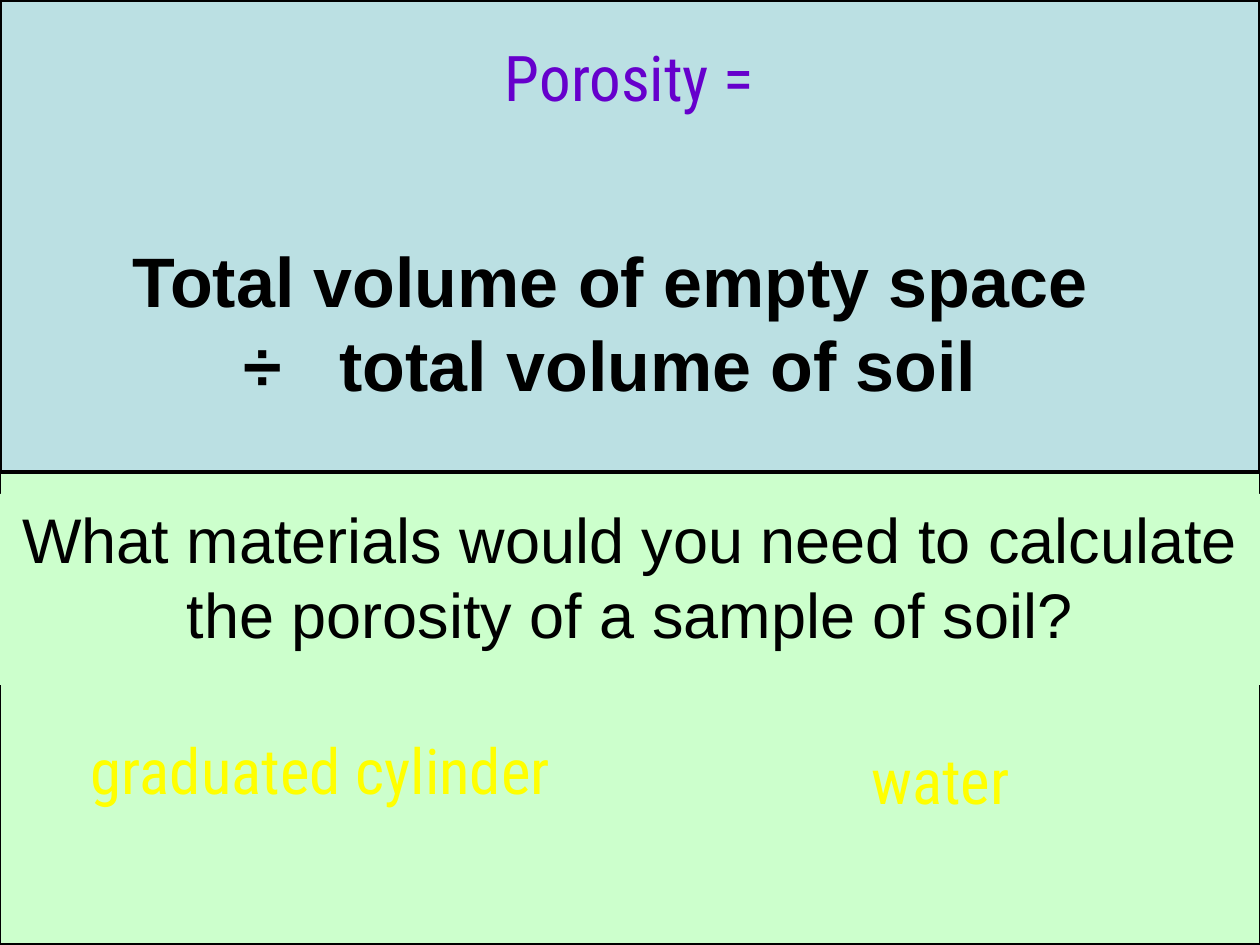
from pptx import Presentation, util as u
from pptx.dml.color import RGBColor
from pptx.enum import shapes, text

EMU_PER_PX = 914400 // 126
WIDTH, HEIGHT = 1260, 945
HALF = HEIGHT // 2
TITLE_ONLY = 5
COLORS = {
    "sky": "BBE0E3",
    "mint": "CCFFCC",
    "black": "000000",
    "purple": "6600CC",
    "yellow": "FFFF00",
}
BODY_FONT = "Arial"
ACCENT_FONT = "Roboto Condensed"


def px(length):
    return u.Emu(length * EMU_PER_PX)


def color(name):
    return RGBColor.from_string(COLORS[name])


class SlideBuilder:
    def __init__(self, slide):
        self.slide = slide

    def panel(self, box, fill, line_width=None):
        shape = self.slide.shapes.add_shape(shapes.MSO_SHAPE.RECTANGLE, *map(px, box))
        shape.shadow.inherit = False
        shape.fill.solid()
        shape.fill.fore_color.rgb = color(fill)
        if line_width is None:
            shape.line.fill.background()
        else:
            shape.line.color.rgb = color("black")
            shape.line.width = u.Pt(line_width)
        return shape

    def set_text(self, shape, lines, size=36, font=BODY_FONT, ink="black",
                 bold=False, anchor=text.MSO_ANCHOR.TOP):
        frame = shape.text_frame
        frame.word_wrap = True
        frame.auto_size = text.MSO_AUTO_SIZE.NONE
        frame.vertical_anchor = anchor
        frame.text = "\n".join(lines)
        for paragraph in frame.paragraphs:
            paragraph.alignment = text.PP_ALIGN.CENTER
            paragraph.font.name = font
            paragraph.font.size = u.Pt(size)
            paragraph.font.bold = bold
            paragraph.font.color.rgb = color(ink)
        return frame

    def title(self, box, words, **style):
        """Place the title in front of the panels drawn so far."""
        shape = self.slide.shapes.title
        shape.left, shape.top, shape.width, shape.height = map(px, box)
        self.set_text(shape, [words], **style)
        shape.element.getparent().append(shape.element)

    def label(self, box, *lines, **style):
        shape = self.slide.shapes.add_textbox(*map(px, box))
        return self.set_text(shape, lines, **style)


def add_formula(builder):
    frame = builder.label((92, 231, 1076, 180), "Total volume of empty space", "÷",
                          size=40, bold=True, anchor=text.MSO_ANCHOR.MIDDLE)
    numerator, denominator = frame.paragraphs
    numerator._p.get_or_add_pPr().set("marR", str(px(40)))
    gap = denominator.add_run()
    gap.text = " "
    gap._r.get_or_add_rPr().set("spc", "2200")
    denominator.add_run().text = "total volume of soil"


def main():
    presentation = Presentation()
    presentation.slide_width, presentation.slide_height = px(WIDTH), px(HEIGHT)
    layout = presentation.slide_layouts[TITLE_ONLY]
    builder = SlideBuilder(presentation.slides.add_slide(layout))

    builder.panel((0, HALF, WIDTH, HALF), "mint", 0.75)
    builder.panel((0, 0, WIDTH, HALF), "sky", 2)
    add_formula(builder)
    builder.title((358, 32, 543, 178), "Porosity =", font=ACCENT_FONT, ink="purple")

    question = builder.panel((0, 494, WIDTH, 191), "mint")
    builder.set_text(question, ["What materials would you need to calculate "
                                "the porosity of a sample of soil?"])

    for box, material in (((73, 725, 495, 78), "graduated cylinder"),
                          ((693, 735, 495, 48), "water")):
        builder.label(box, material, font=ACCENT_FONT, ink="yellow")

    presentation.save("out.pptx")


if __name__ == "__main__":
    main()
